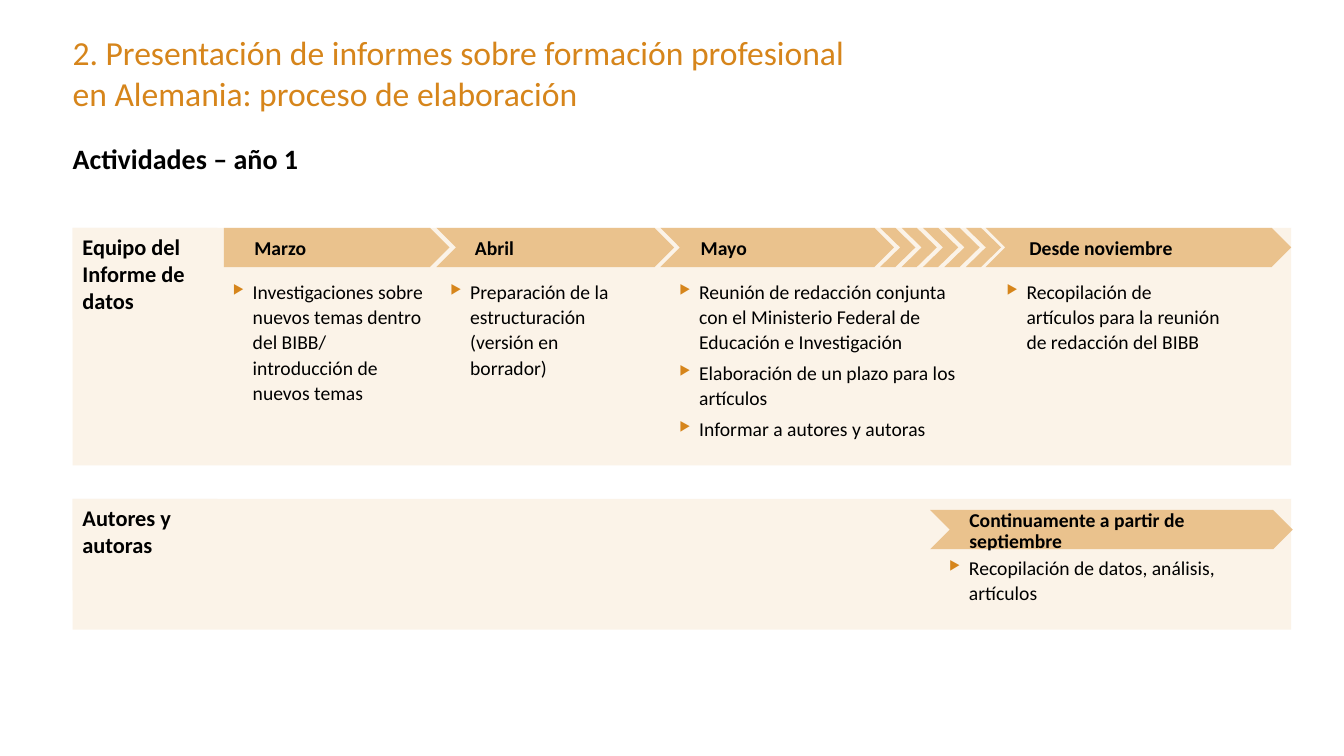
from lxml import etree
from pptx import Presentation
from pptx import util as u
from pptx.dml.color import RGBColor
from pptx.enum import shapes, text
from pptx.oxml.ns import qn

ORANGE = RGBColor(0xD6, 0x85, 0x1B)
SAND = RGBColor(0xEA, 0xC2, 0x8D)
CREAM = RGBColor(0xFB, 0xF3, 0xE8)
BLACK = RGBColor(0, 0, 0)
FONT = "Calibri"
LEFT, WIDTH = 1.83, 30.71
ARROW_HEIGHT = 0.99
KIND = shapes.MSO_SHAPE

NO_INSETS = (0, 0, 0, 0)
HEADING_INSETS = (0.25, 0.13, 0.25, 0.13)
LABEL_INSETS = (0.41, 0.3, 0.41, 0.2)
LIST_INSETS = (0.2, 0.1, 0.2, 0.2)

TEAM_STEPS = [
    dict(kind=KIND.PENTAGON, left=3.81, width=5.69, label="Marzo", label_left=0.36, label_width=4.72,
         list_left=3.84, list_width=5.28, list_height=3.48,
         items=["Investigaciones sobre nuevos temas dentro del BIBB/ introducción de nuevos temas"]),
    dict(kind=KIND.CHEVRON, left=9.17, width=5.99, label="Abril", label_left=0.56, label_width=4.17,
         list_left=9.32, list_width=5, list_height=2.18,
         items=["Preparación de la estructuración (versión en borrador)"]),
    dict(kind=KIND.CHEVRON, left=14.81, width=5.89, label="Mayo", label_left=0.61, label_width=4.83,
         list_left=15.09, list_width=7.42, list_height=4.39,
         items=["Reunión de redacción conjunta con el Ministerio Federal de Educación e Investigación",
                "Elaboración de un plazo para los artículos",
                "Informar a autores y autoras"]),
    dict(kind=KIND.CHEVRON, left=23.01, width=7.7, label="Desde noviembre", label_left=0.69, label_width=6.25,
         list_left=23.34, list_width=5.82, list_height=2.18,
         items=["Recopilación de artículos para la reunión de redacción del BIBB"]),
]
AUTHOR_STEPS = [
    dict(kind=KIND.CHEVRON, left=21.61, width=9.14, label="Continuamente a partir de septiembre",
         label_left=0.58, label_width=8.46, list_left=21.89, list_width=7.29, list_height=1.55,
         items=["Recopilación de datos, análisis,\nartículos"]),
]


def add_block(page, kind, place, fill):
    """Add a flat filled shape without outline."""
    block = page.shapes.add_shape(kind, *map(u.Cm, place))
    block.shadow.inherit = False
    block.fill.solid()
    block.fill.fore_color.rgb = fill
    block.line.fill.background()
    return block


def add_bullet(para):
    """Give a paragraph a hanging orange triangle."""
    props = para._p.get_or_add_pPr()
    props.set("marL", str(u.Cm(0.5)))
    props.set("indent", str(u.Cm(-0.5)))
    colour = etree.SubElement(props, qn("a:buClr"))
    etree.SubElement(colour, qn("a:srgbClr"), val=str(ORANGE))
    etree.SubElement(props, qn("a:buSzPct"), val="65000")
    etree.SubElement(props, qn("a:buChar"), char="▶")


def write(box, lines, size, insets, colour=BLACK, bold=False, anchor=text.MSO_ANCHOR.TOP,
          bullet=False, **spacing):
    """Fill a box with formatted paragraphs."""
    frame = box.text_frame
    sides = ("margin_left", "margin_top", "margin_right", "margin_bottom")
    settings = dict(zip(sides, map(u.Cm, insets)), word_wrap=True, vertical_anchor=anchor)
    for name, value in settings.items():
        setattr(frame, name, value)
    for index, line in enumerate(lines):
        para = frame.add_paragraph() if index else frame.paragraphs[0]
        para.text = line
        if bullet:
            add_bullet(para)
        for name, value in dict(alignment=text.PP_ALIGN.LEFT, **spacing).items():
            setattr(para, name, value)
        for span in para.runs:
            for name, value in dict(name=FONT, size=u.Pt(size), bold=bold).items():
                setattr(span.font, name, value)
            span.font.color.rgb = colour


def add_text(page, place, lines, size, insets, **format_values):
    """Add a text box at a place given in centimetres."""
    box = page.shapes.add_textbox(*map(u.Cm, place))
    write(box, lines, size, insets, **format_values)


def add_step(page, left, top, list_top, step):
    """Draw one arrow with its label and the list below it."""
    arrow_left = left + step["left"]
    add_block(page, step["kind"], (arrow_left, top, step["width"], ARROW_HEIGHT), SAND)
    add_text(page, (arrow_left + step["label_left"], top, step["label_width"], ARROW_HEIGHT),
             [step["label"]], 14, LABEL_INSETS, bold=True, anchor=text.MSO_ANCHOR.MIDDLE,
             line_spacing=0.9, space_after=u.Pt(4))
    place = left + step["list_left"], list_top, step["list_width"], step["list_height"]
    write(add_block(page, KIND.RECTANGLE, place, CREAM), step["items"], 14, LIST_INSETS,
          bullet=True, line_spacing=u.Pt(18), space_after=u.Pt(4))


def add_panel(page, place, heading, heading_height, steps, arrow_offset, list_offset):
    """Draw a cream panel with its heading and steps."""
    left, top, _, _ = place
    add_block(page, KIND.RECTANGLE, place, CREAM)
    heading_box = add_block(page, KIND.RECTANGLE, (left, top, 3.65, heading_height), CREAM)
    write(heading_box, [heading], 16, HEADING_INSETS, bold=True)
    for step in steps:
        add_step(page, left, top + arrow_offset, top + list_offset, step)


def add_interval(page, left, top, count=5, pitch=0.54):
    """Draw the row of small chevrons for the months in between."""
    for index in range(count):
        place = left + index * pitch, top, 0.89, ARROW_HEIGHT
        add_block(page, KIND.CHEVRON, place, SAND).adjustments[0] = 0.57


def add_header(page, left, top, width):
    """Write the title and the subtitle."""
    add_text(page, (left, top, 25, 2.06),
             ["2. Presentación de informes sobre formación profesional\n"
              "en Alemania: proceso de elaboración"], 24, NO_INSETS, colour=ORANGE)
    add_text(page, (left, top + 2.75, width, 1.22), ["Actividades – año 1"], 20, NO_INSETS, bold=True)


def main():
    """Build and save the slide."""
    deck = Presentation()
    deck.slide_width, deck.slide_height = u.Cm(33.87), u.Cm(19.05)
    page = deck.slides.add_slide(deck.slide_layouts[6])
    add_header(page, LEFT, 0.81, WIDTH)
    add_panel(page, (LEFT, 5.74, WIDTH, 5.99), "Equipo del Informe de datos", 2.31, TEAM_STEPS, 0, 1.17)
    add_interval(page, LEFT + 20.35, 5.74)
    add_panel(page, (LEFT, 12.57, WIDTH, 3.3), "Autores y autoras", 2.31, AUTHOR_STEPS, 0.28, 1.3)
    deck.save("out.pptx")


if __name__ == "__main__":
    main()
